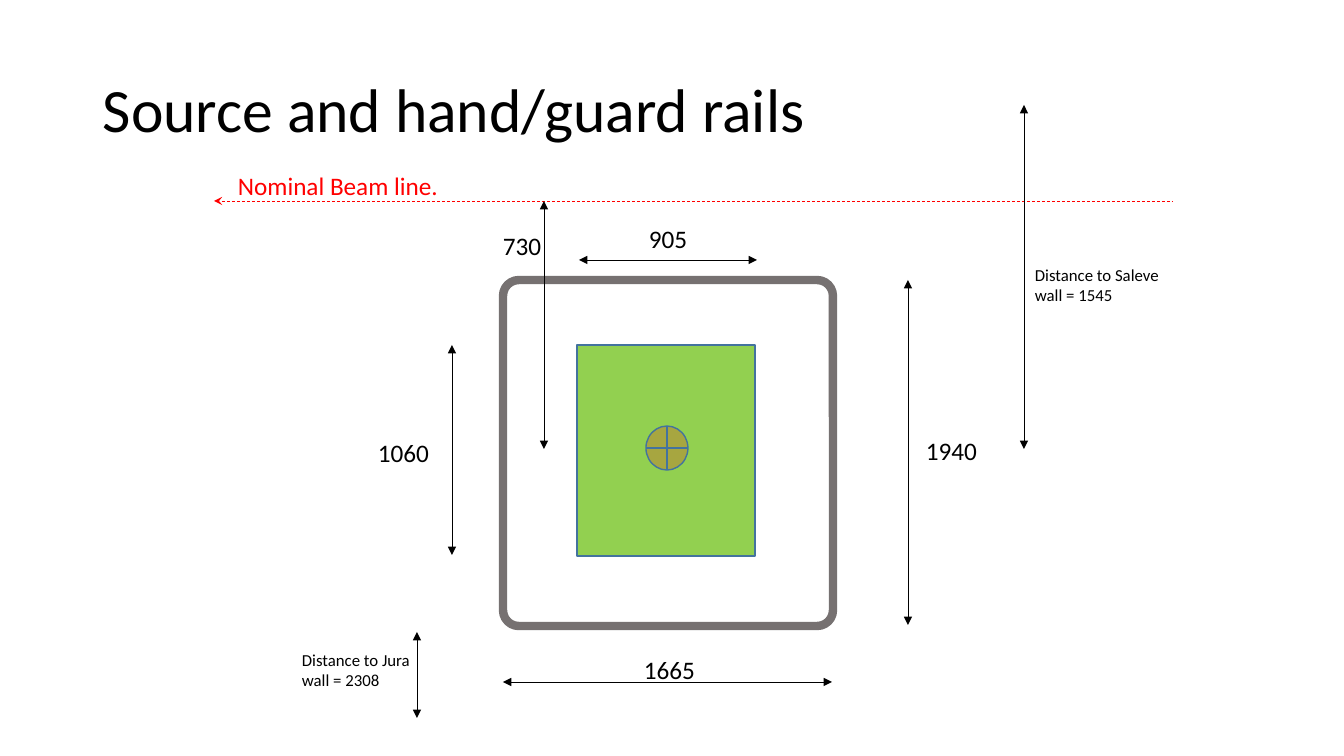
from pptx import Presentation
from pptx.dml.color import RGBColor
from pptx.enum.dml import MSO_LINE
from pptx.enum.shapes import MSO_CONNECTOR, MSO_SHAPE
from pptx.enum.text import MSO_ANCHOR
from pptx.oxml.ns import qn
from pptx.util import Emu, Pt
from lxml import etree

STRAIGHT = MSO_CONNECTOR.STRAIGHT
RECT = MSO_SHAPE.RECTANGLE
ROUND_RECT = MSO_SHAPE.ROUNDED_RECTANGLE
CROSSED_CIRCLE = MSO_SHAPE.FLOWCHART_OR
DASH = MSO_LINE.DASH
TOP, MIDDLE = MSO_ANCHOR.TOP, MSO_ANCHOR.MIDDLE

FONT = "Calibri"
COLORS = {"text": "000000", "beam": "FF0000", "platform": "92D050",
          "outline": "43739E", "rail": "767171", "source": "FF0000"}

# Boxes are left, top, width, height in px
TITLE = ("Source and hand/guard rails", (93, 40, 1159, 146))
BEAM_LABEL = ("Nominal Beam line.", (228, 165, 232, 40))
BEAM = (214, 201, 1173, 201)
PLATFORM = (577, 345, 178, 211)
RAIL = (503, 280, 330, 346)
SOURCE = (646, 426, 42, 44)

# Dimension line (x1, y1, x2, y2), label, label box, text size
DIMENSIONS = [
    ((503, 682, 832, 682), "1665", (634, 649, 81, 40), 18),
    ((908, 280, 908, 625), "1940", (916, 430, 85, 40), 18),
    ((452, 345, 452, 555), "1060", (368, 432, 84, 40), 18),
    ((579, 260, 757, 260), "905", (639, 218, 67, 40), 18),
    ((544, 449, 544, 201), "730", (493, 225, 67, 40), 18),
    ((417, 632, 417, 718), "Distance to Jura wall = 2308", (292, 645, 144, 50), 12),
    ((1024, 449, 1024, 105), "Distance to Saleve wall = 1545", (1025, 260, 168, 50), 12),
]

EMU_PER_PX = 914400 / 100.8


def px(*values):
    return [Emu(round(v * EMU_PER_PX)) for v in values]


def rgb(name):
    return RGBColor.from_string(COLORS[name])


def add_text(slide, text, box, size=18, color="text", anchor=TOP, spacing=1.0):
    tf = slide.shapes.add_textbox(*px(*box)).text_frame
    tf.word_wrap = True
    tf.vertical_anchor = anchor
    p = tf.paragraphs[0]
    p.line_spacing = spacing
    r = p.add_run()
    r.text = text
    r.font.name = FONT
    r.font.size = Pt(size)
    r.font.color.rgb = rgb(color)


def add_shape(slide, kind, box, line, width=1, fill=None, alpha=None):
    """Add a preset shape; alpha is the fill opacity in percent."""
    sp = slide.shapes.add_shape(kind, *px(*box))
    sp.shadow.inherit = False
    sp.line.color.rgb = rgb(line)
    sp.line.width = Pt(width)
    if fill:
        sp.fill.solid()
        sp.fill.fore_color.rgb = rgb(fill)
    else:
        sp.fill.background()
    if alpha:
        clr = sp.fill._xPr.find(qn("a:solidFill"))[0]
        etree.SubElement(clr, qn("a:alpha"), val=str(alpha * 1000))
    return sp


def add_arrow(slide, ends, color="text", head="triangle", tail=None, dash=None):
    """Add a thin line with an arrowhead at its start and, if given, its end."""
    cxn = slide.shapes.add_connector(STRAIGHT, *px(*ends))
    cxn.line.color.rgb = rgb(color)
    cxn.line.width = Pt(0.5)
    if dash:
        cxn.line.dash_style = dash
    ln = cxn.line._get_or_add_ln()
    for tag, kind in (("a:headEnd", head), ("a:tailEnd", tail)):
        if kind:
            etree.SubElement(ln, qn(tag), type=kind)
    etree.SubElement(cxn._element.spPr, qn("a:effectLst"))


def main():
    prs = Presentation()
    prs.slide_width, prs.slide_height = px(1344, 756)
    slide = prs.slides.add_slide(prs.slide_layouts[6])

    add_text(slide, *TITLE, size=44, anchor=MIDDLE, spacing=0.9)
    add_shape(slide, RECT, PLATFORM, "outline", fill="platform")
    add_arrow(slide, BEAM, color="beam", head="stealth", dash=DASH)
    rail = add_shape(slide, ROUND_RECT, RAIL, "rail", width=6)
    rail.adjustments[0] = 0.048
    add_text(slide, *BEAM_LABEL, color="beam")
    add_shape(slide, CROSSED_CIRCLE, SOURCE, "outline", fill="source", alpha=20)
    for ends, label, box, size in DIMENSIONS:
        add_arrow(slide, ends, tail="triangle")
        add_text(slide, label, box, size=size)

    prs.save("out.pptx")


if __name__ == "__main__":
    main()
